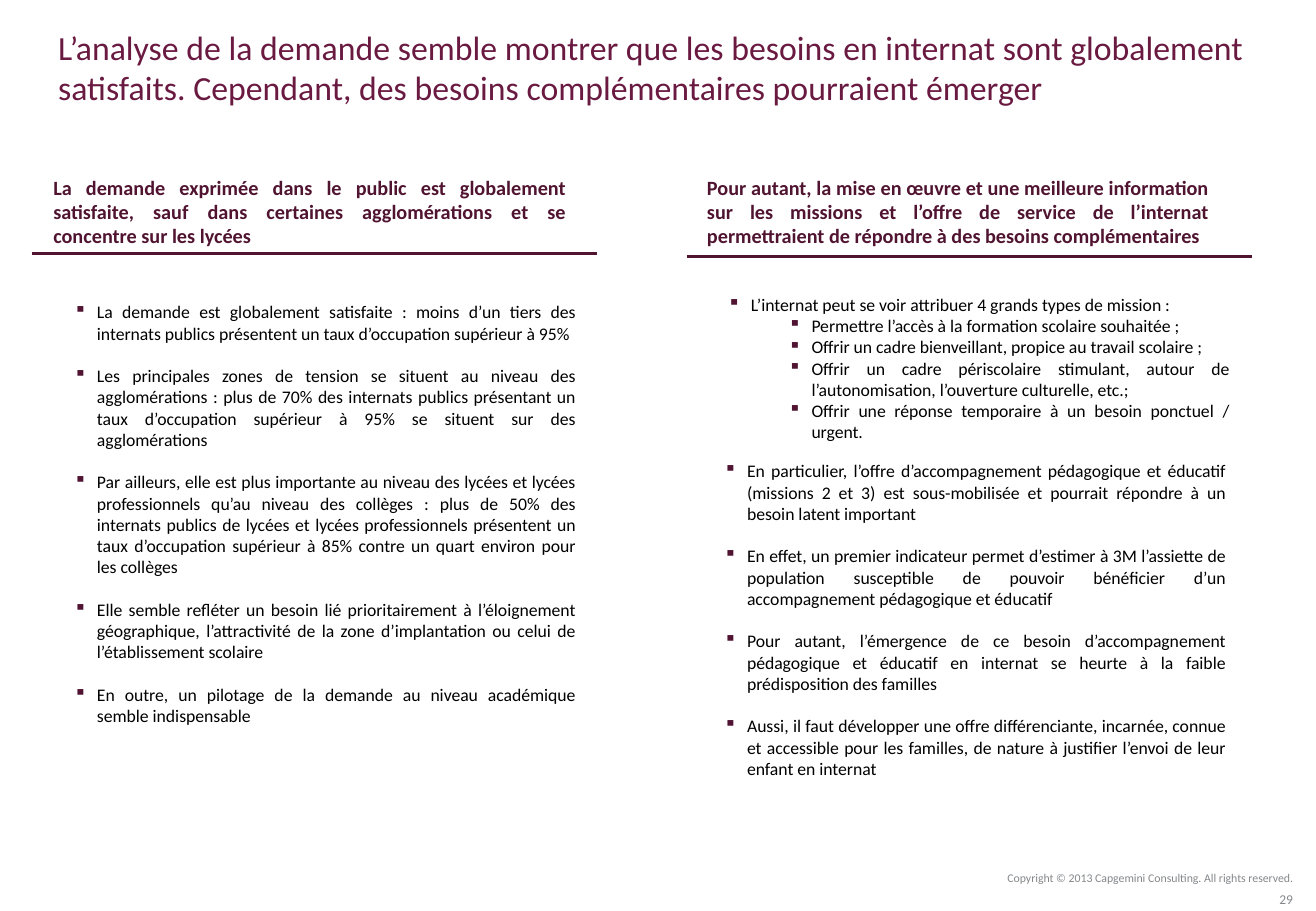
from lxml import etree
from pptx import Presentation
from pptx.dml.color import RGBColor
from pptx.enum.shapes import MSO_CONNECTOR
from pptx.enum.text import MSO_ANCHOR, PP_ALIGN
from pptx.oxml.ns import qn
from pptx.util import Inches, Pt

LEFT, RIGHT, JUSTIFY = PP_ALIGN.LEFT, PP_ALIGN.RIGHT, PP_ALIGN.JUSTIFY
TOP, MIDDLE = MSO_ANCHOR.TOP, MSO_ANCHOR.MIDDLE
STRAIGHT = MSO_CONNECTOR.STRAIGHT

PLUM = RGBColor(0x6A, 0x1A, 0x41)
DARK_PLUM = RGBColor(0x50, 0x14, 0x31)
BULLET_PLUM = RGBColor(0x50, 0x13, 0x31)
GREY = RGBColor(0x85, 0x88, 0x8B)
BLACK = RGBColor(0x00, 0x00, 0x00)

TITLE = (
    "L’analyse de la demande semble montrer que les besoins en internat sont globalement "
    "satisfaits. Cependant, des besoins complémentaires pourraient émerger"
)
DEMAND_HEADING = (
    "La demande exprimée dans le public est globalement satisfaite, sauf dans certaines "
    "agglomérations et se concentre sur les lycées"
)
OFFER_HEADING = (
    "Pour autant, la mise en œuvre et une meilleure information sur les missions et l’offre "
    "de service de l’internat permettraient de répondre à des besoins complémentaires"
)
DEMAND_POINTS = [
    "La demande est globalement satisfaite : moins d’un tiers des internats publics "
    "présentent un taux d’occupation supérieur à 95%",
    "Les principales zones de tension se situent au niveau des agglomérations : plus de 70% "
    "des internats publics présentant un taux d’occupation supérieur à 95% se situent sur "
    "des agglomérations",
    "Par ailleurs, elle est plus importante au niveau des lycées et lycées professionnels "
    "qu’au niveau des collèges : plus de 50% des internats publics de lycées et lycées "
    "professionnels présentent un taux d’occupation supérieur à 85% contre un quart environ "
    "pour les collèges",
    "Elle semble refléter un besoin lié prioritairement à l’éloignement géographique, "
    "l’attractivité de la zone d’implantation ou celui de l’établissement scolaire",
    "En outre, un pilotage de la demande au niveau académique semble indispensable",
]
OFFER_POINTS = [
    "En particulier, l’offre d’accompagnement pédagogique et éducatif (missions 2 et 3) est "
    "sous-mobilisée et pourrait répondre à un besoin latent important",
    "En effet, un premier indicateur permet d’estimer à 3M l’assiette de population "
    "susceptible de pouvoir bénéficier d’un accompagnement pédagogique et éducatif",
    "Pour autant, l’émergence de ce besoin d’accompagnement pédagogique et éducatif en "
    "internat se heurte à la faible prédisposition des familles",
    "Aussi, il faut développer une offre différenciante, incarnée, connue et accessible pour "
    "les familles, de nature à justifier l’envoi de leur enfant en internat",
]
MISSIONS = [
    "L’internat peut se voir attribuer 4 grands types de mission :",
    "Permettre l’accès à la formation scolaire souhaitée ;",
    "Offrir un cadre bienveillant, propice au travail scolaire ;",
    "Offrir un cadre périscolaire stimulant, autour de l’autonomisation, l’ouverture "
    "culturelle, etc.;",
    "Offrir une réponse temporaire à un besoin ponctuel / urgent.",
]


class InternatSlide:
    font_name = "Calibri"
    point_size = 10.5
    point_gap = Pt(12.6)
    indents = (0.19, 0.69)
    hanging = 0.19

    def __init__(self, slide):
        self.slide = slide

    def frame(self, box, anchor):
        frame = self.slide.shapes.add_textbox(*map(Inches, box)).text_frame
        frame.word_wrap = True
        frame.vertical_anchor = anchor
        return frame

    def style(self, paragraph, text, size, color, align, bold=False):
        paragraph.text = text
        paragraph.alignment = align
        font = paragraph.font
        font.name = self.font_name
        font.size = Pt(size)
        font.bold = bold
        font.color.rgb = color

    def text(self, text, box, size, color, align=LEFT, anchor=MIDDLE, bold=False):
        paragraph = self.frame(box, anchor).paragraphs[0]
        self.style(paragraph, text, size, color, align, bold)

    def bullet(self, paragraph, level):
        paragraph.level = level
        properties = paragraph._p.get_or_add_pPr()
        properties.set("marL", str(Inches(self.indents[level])))
        properties.set("indent", str(-Inches(self.hanging)))
        bullet_color = etree.SubElement(properties, qn("a:buClr"))
        etree.SubElement(bullet_color, qn("a:srgbClr"), val=str(BULLET_PLUM))
        etree.SubElement(properties, qn("a:buChar"), char="▪")

    def points(self, texts, box, gap=0, nested=False):
        frame = self.frame(box, TOP)
        for index, text in enumerate(texts):
            paragraph = frame.add_paragraph() if index else frame.paragraphs[0]
            self.bullet(paragraph, 1 if nested and index else 0)
            if index and gap:
                paragraph.space_before = gap
            self.style(paragraph, text, self.point_size, BLACK, JUSTIFY)

    def rule(self, left, top, width):
        line = self.slide.shapes.add_connector(
            STRAIGHT, Inches(left), Inches(top), Inches(left + width), Inches(top)
        )
        line.line.color.rgb = DARK_PLUM
        line.line.width = Pt(1.75)
        etree.SubElement(line._element.spPr, qn("a:effectLst"))


def main():
    deck = Presentation()
    deck.slide_width, deck.slide_height = Inches(10.83), Inches(7.5)
    page = InternatSlide(deck.slides.add_slide(deck.slide_layouts[6]))

    page.text(TITLE, (0.38, 0.13, 10.45, 0.84), 20, PLUM)
    page.text(
        "Copyright © 2013 Capgemini Consulting. All rights reserved.",
        (7.57, 7.12, 3.17, 0.22), 7, GREY, RIGHT,
    )
    page.text("29", (8.21, 7.34, 2.53, 0.13), 8, GREY, RIGHT)

    for heading, left, width, rule_left, rule_top in (
        (DEMAND_HEADING, 0.34, 4.42, 0.26, 2.09),
        (OFFER_HEADING, 5.72, 4.33, 5.65, 2.11),
    ):
        page.text(heading, (left, 1.39, width, 0.71), 12, DARK_PLUM, JUSTIFY, TOP, True)
        page.rule(rule_left, rule_top, 4.65)

    page.points(DEMAND_POINTS, (0.51, 2.43, 4.33, 3.81), page.point_gap)
    page.points(OFFER_POINTS, (5.86, 3.74, 4.33, 2.93), page.point_gap)
    page.points(MISSIONS, (5.89, 2.37, 4.33, 1.34), nested=True)

    deck.save("out.pptx")


if __name__ == "__main__":
    main()
